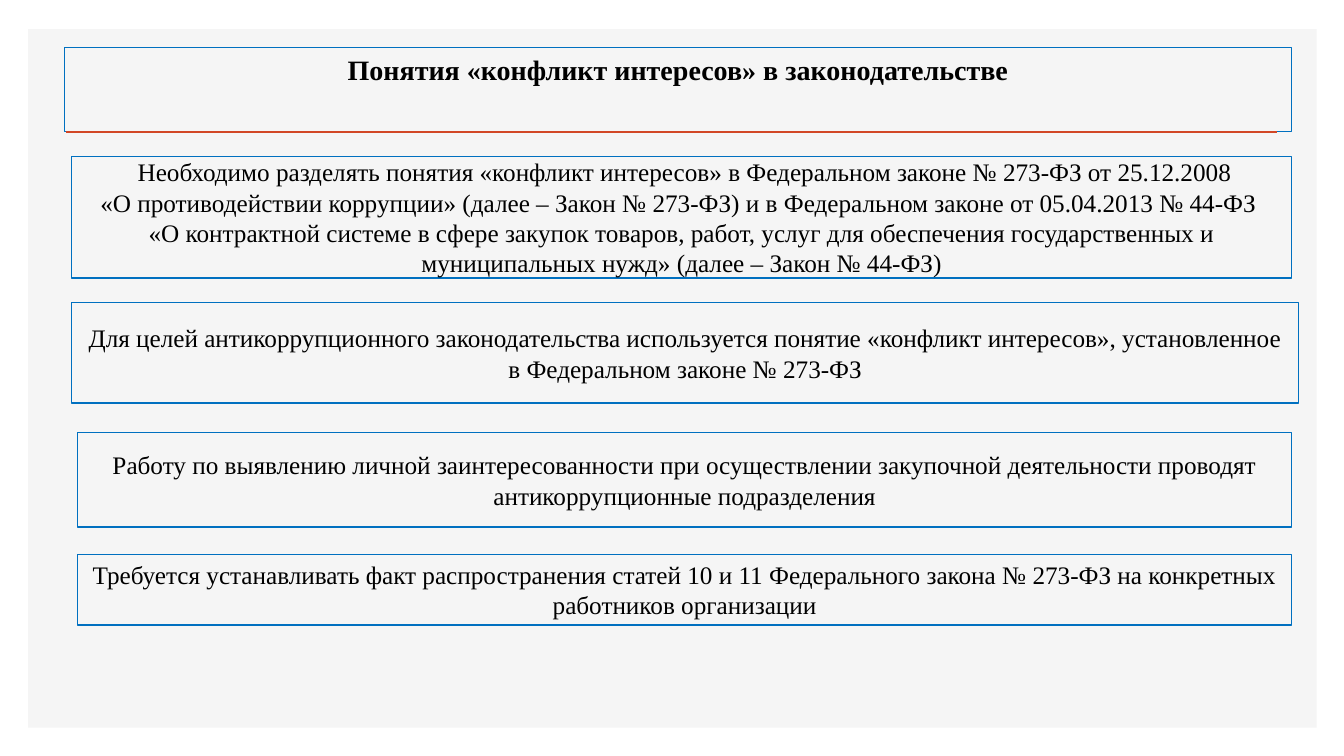
import pptx
import pptx.dml.color
import pptx.enum.shapes
import pptx.enum.text
import pptx.util
from lxml import etree

RGBColor = pptx.dml.color.RGBColor
BLACK = RGBColor(0x00, 0x00, 0x00)
BLUE = RGBColor(0x00, 0x70, 0xC0)
ORANGE = RGBColor(0xD2, 0x47, 0x26)
PALE_GREY = RGBColor(0xF5, 0xF5, 0xF5)
FONT = "Times New Roman"
WIDTH = pptx.util.Inches(13.33)
HEIGHT = pptx.util.Inches(7.5)
DRAWING = "http://schemas.openxmlformats.org/drawingml/2006/main"

TITLE = "Понятия «конфликт интересов» в законодательстве"
STATEMENTS = [
    ((5.33, 20.67, 90.77, 16.13), [
        " Необходимо разделять понятия «конфликт интересов» в Федеральном законе № 273-ФЗ от 25.12.2008",
        "«О противодействии коррупции» (далее – Закон № 273-ФЗ) и в Федеральном законе от 05.04.2013 № 44-ФЗ ",
        "«О контрактной системе в сфере закупок товаров, работ, услуг для обеспечения "
        "государственных и муниципальных нужд» (далее – Закон № 44-ФЗ)",
    ]),
    ((5.33, 40, 91.3, 13.33), [
        "Для целей антикоррупционного законодательства используется понятие "
        "«конфликт интересов», установленное в Федеральном законе № 273-ФЗ",
    ]),
    ((5.78, 57.2, 90.32, 12.53), [
        "Работу по выявлению личной заинтересованности при осуществлении закупочной "
        "деятельности проводят антикоррупционные подразделения",
    ]),
    ((5.78, 73.33, 90.32, 9.33), [
        "Требуется устанавливать факт распространения статей 10 и 11 Федерального закона "
        "№ 273-ФЗ на конкретных работников организации",
    ]),
]


def across(percent):
    """Turn a percentage of the slide's width into a length."""
    return round(WIDTH * percent / 100)


def down(percent):
    """Turn a percentage of the slide's height into a length."""
    return round(HEIGHT * percent / 100)


def frame(area):
    """Turn left, top, width and height percentages into lengths."""
    left, top, width, height = area
    return across(left), down(top), across(width), down(height)


def write(box, paragraphs, size=18, bold=False, anchor=pptx.enum.text.MSO_ANCHOR.MIDDLE):
    """Fill a box with centred black paragraphs."""
    text_frame = box.text_frame
    text_frame.word_wrap = True
    text_frame.vertical_anchor = anchor
    text_frame.text = "\n".join(paragraphs)
    for para in text_frame.paragraphs:
        para.alignment = pptx.enum.text.PP_ALIGN.CENTER
        for span in para.runs:
            span.font.name = FONT
            span.font.size = pptx.util.Pt(size)
            span.font.bold = bold
            span.font.color.rgb = BLACK


def outline(box, width):
    """Give a box a blue border and no fill."""
    box.fill.background()
    box.line.color.rgb = BLUE
    box.line.width = pptx.util.Pt(width)


def add_rectangle(page, area):
    """Add a plain rectangle without a shadow."""
    box = page.shapes.add_shape(pptx.enum.shapes.MSO_SHAPE.RECTANGLE, *frame(area))
    box.shadow.inherit = False
    return box


def add_backdrop(page):
    """Lay the grey panel behind the title."""
    panel = add_rectangle(page, (2.1, 3.87, 95.87, 92.4))
    panel.fill.solid()
    panel.fill.fore_color.rgb = PALE_GREY
    panel.line.fill.background()
    page.shapes.title.element.addprevious(panel.element)


def add_rule(page, left, right, top):
    """Draw the orange line under the title."""
    rule = page.shapes.add_connector(
        pptx.enum.shapes.MSO_CONNECTOR.STRAIGHT,
        across(left), down(top), across(right), down(top))
    rule.line.color.rgb = ORANGE
    rule.line.width = pptx.util.Pt(2)
    etree.SubElement(rule.element.spPr, f"{{{DRAWING}}}effectLst")


def set_title(page):
    """Place and format the title placeholder."""
    title = page.shapes.title
    title.left, title.top, title.width, title.height = frame((4.8, 6.27, 91.3, 5.87))
    outline(title, 0.75)
    write(title, [TITLE], size=20, bold=True, anchor=pptx.enum.text.MSO_ANCHOR.TOP)
    title.text_frame.auto_size = pptx.enum.text.MSO_AUTO_SIZE.SHAPE_TO_FIT_TEXT


def add_statement(page, area, paragraphs):
    """Add one bordered statement."""
    box = add_rectangle(page, area)
    outline(box, 1)
    write(box, paragraphs)


def main():
    """Build and save the slide."""
    deck = pptx.Presentation()
    deck.slide_width, deck.slide_height = WIDTH, HEIGHT
    page = deck.slides.add_slide(deck.slide_layouts.get_by_name("Title Only"))
    add_backdrop(page)
    add_rule(page, 4.95, 95.05, 17.47)
    set_title(page)
    for area, paragraphs in STATEMENTS:
        add_statement(page, area, paragraphs)
    deck.save("out.pptx")


if __name__ == "__main__":
    main()
